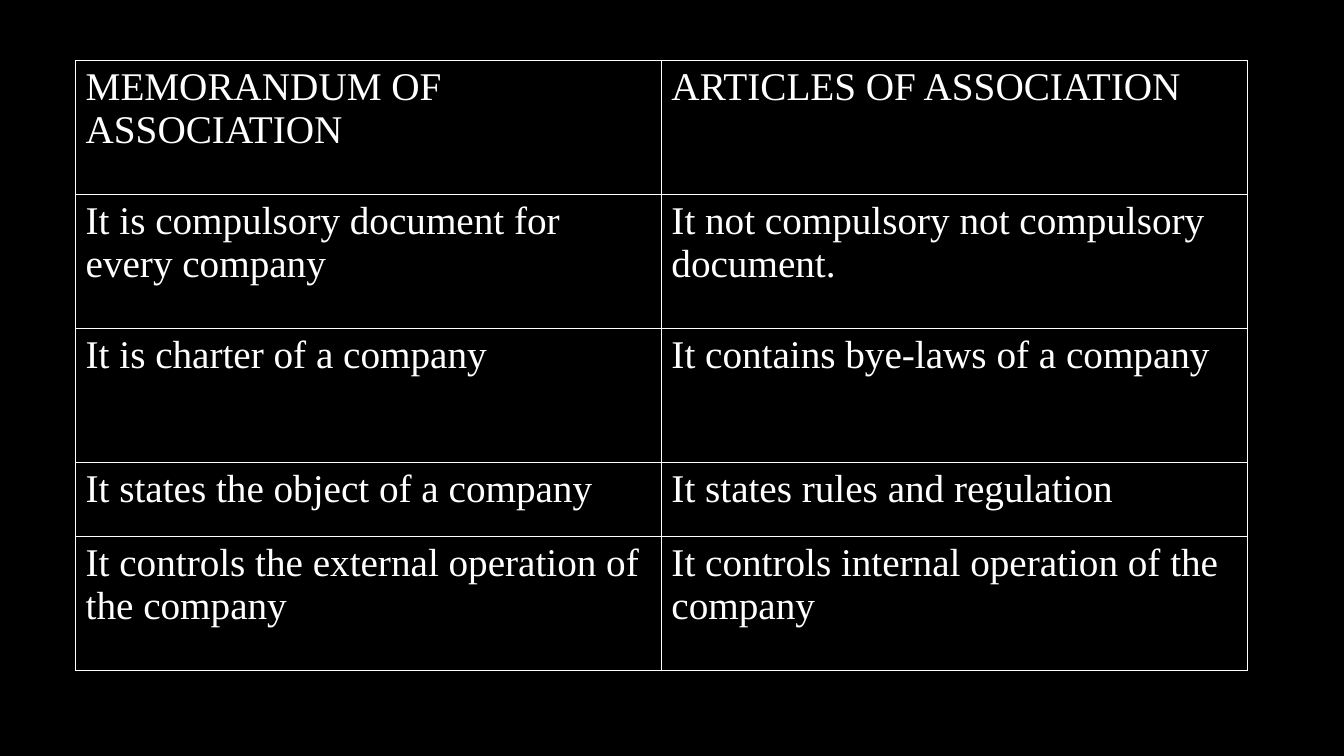
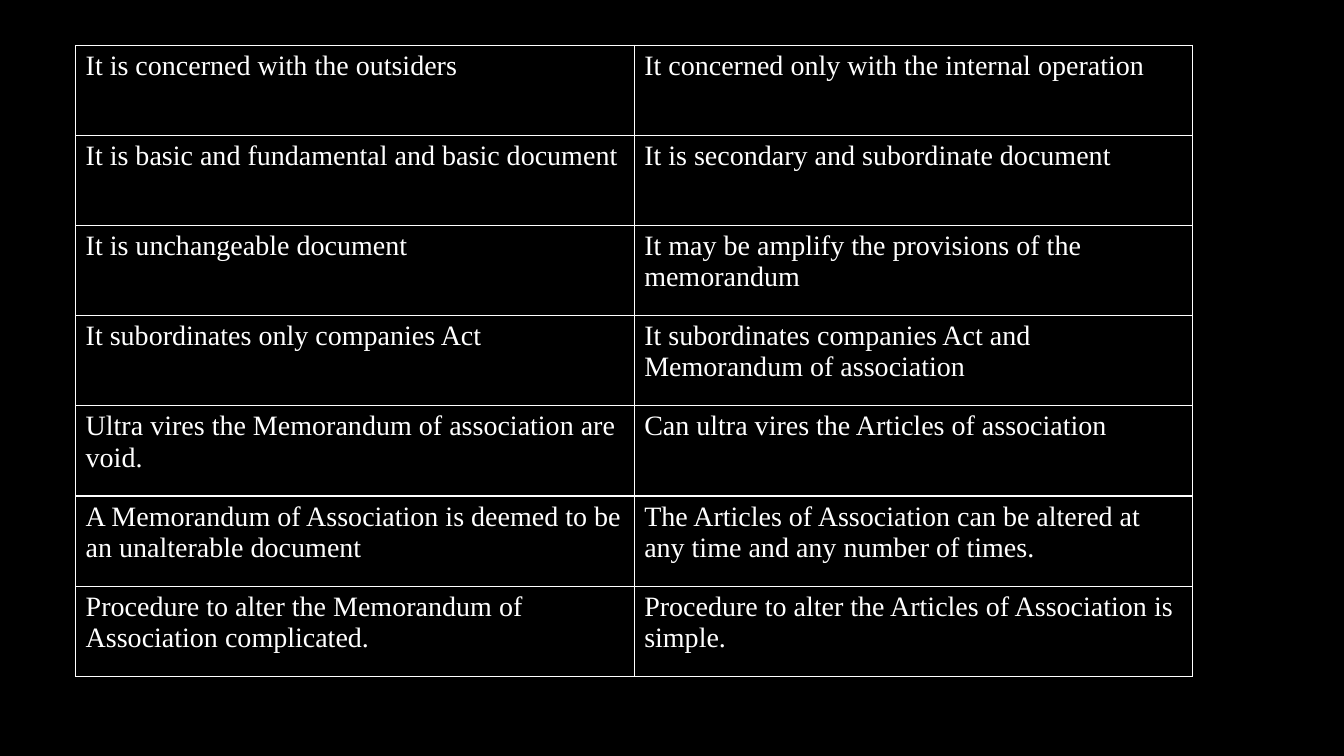
from lxml.etree import SubElement
from pptx import Presentation
from pptx.dml.color import RGBColor
from pptx.oxml.ns import qn
from pptx.util import Inches, Pt

BLACK = "000000"
WHITE = "FFFFFF"
FONT = "Times New Roman"
LEFT = 0.75


def paint(fill, color):
    fill.solid()
    fill.fore_color.rgb = RGBColor.from_string(color)


def add_borders(cell, color, width):
    """Draw all four cell borders; they must precede the cell fill."""
    properties = cell._tc.get_or_add_tcPr()
    for side in ("a:lnL", "a:lnR", "a:lnT", "a:lnB"):
        line = SubElement(properties, qn(side), w=str(Pt(width)))
        solid = SubElement(line, qn("a:solidFill"))
        SubElement(solid, qn("a:srgbClr"), val=color)


# Comparison tables, one per slide
comparisons = [
    {
        "top": 0.6, "column_width": 5.81, "size": 28,
        "row_heights": [1.33, 1.33, 1.33, 0.73, 1.33],
        "rows": [
            ("MEMORANDUM OF ASSOCIATION", "ARTICLES OF ASSOCIATION"),
            ("It is compulsory document for every company",
             "It not compulsory not compulsory document."),
            ("It is charter of a company", "It contains bye-laws of a company"),
            ("It states the object of a company", "It states rules and regulation"),
            ("It controls the external operation of the company",
             "It controls internal operation of the company"),
        ],
    },
    {
        "top": 0.45, "column_width": 5.54, "size": 20,
        "row_heights": [6.26 / 7] * 7,
        "rows": [
            ("It is concerned with the outsiders",
             "It concerned only with the internal operation"),
            ("It is basic and fundamental and basic document",
             "It is secondary and subordinate document"),
            ("It is unchangeable document",
             "It may be amplify the provisions of the memorandum"),
            ("It subordinates only companies Act",
             "It subordinates companies Act and Memorandum of association"),
            ("Ultra vires the Memorandum of association are void.",
             "Can ultra vires the Articles of association"),
            ("A Memorandum of Association is deemed to be an unalterable document",
             "The Articles of Association can be altered at any time and any number of times."),
            ("Procedure to alter the Memorandum of Association complicated.",
             "Procedure to alter the Articles of Association is simple."),
        ],
    },
]

# Deck with a shared black background
deck = Presentation()
deck.slide_width = Inches(13.33)
deck.slide_height = Inches(7.5)
paint(deck.slide_master.background.fill, BLACK)
blank_layout = deck.slide_layouts[6]

for comparison in comparisons:
    page = deck.slides.add_slide(blank_layout)
    rows = comparison["rows"]
    heights = comparison["row_heights"]
    table = page.shapes.add_table(
        len(rows), 2, Inches(LEFT), Inches(comparison["top"]),
        Inches(2 * comparison["column_width"]), Inches(sum(heights))).table
    table.first_row = False
    table.horz_banding = False

    # Cells
    for row_index, texts in enumerate(rows):
        table.rows[row_index].height = Inches(heights[row_index])
        for column_index, text in enumerate(texts):
            cell = table.cell(row_index, column_index)
            add_borders(cell, WHITE, 1)
            paint(cell.fill, BLACK)
            cell.text = text
            font = cell.text_frame.paragraphs[0].font
            font.name = FONT
            font.size = Pt(comparison["size"])
            font.color.rgb = RGBColor.from_string(WHITE)

deck.save("out.pptx")
